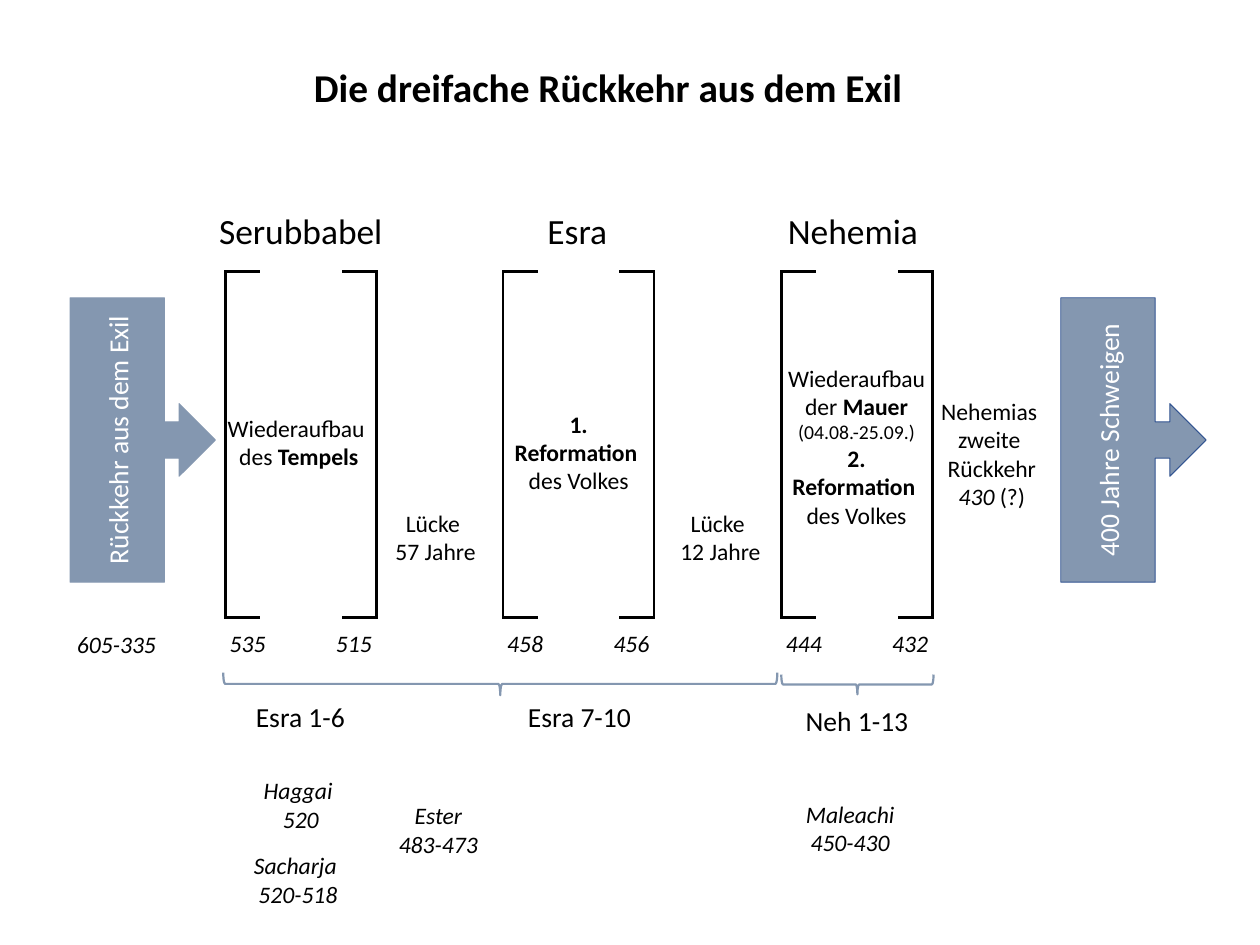
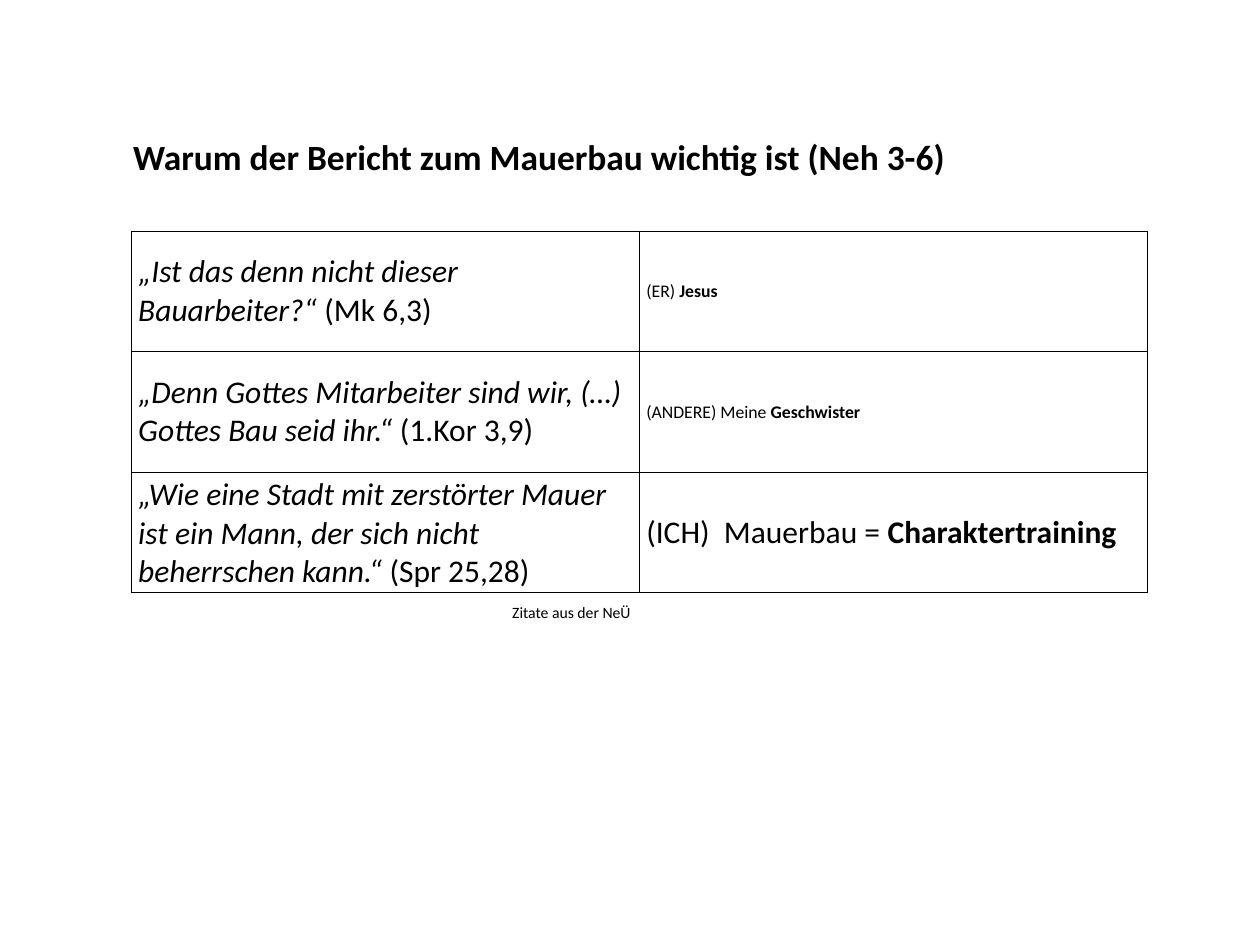
from dataclasses import dataclass
from typing import NamedTuple

from lxml import etree
from pptx import Presentation
from pptx.dml.color import RGBColor
from pptx.enum.shapes import MSO_CONNECTOR, MSO_SHAPE
from pptx.enum.text import MSO_ANCHOR, PP_ALIGN
from pptx.oxml.ns import qn
from pptx.util import Cm, Pt

STRAIGHT = MSO_CONNECTOR.STRAIGHT
CALLOUT = MSO_SHAPE.RIGHT_ARROW_CALLOUT
BRACE = MSO_SHAPE.RIGHT_BRACE
MIDDLE = MSO_ANCHOR.MIDDLE
CENTER = PP_ALIGN.CENTER
LEFT = PP_ALIGN.LEFT

COLORS = {"text": "000000", "slate": "8497B0", "edge": "325491", "light": "FFFFFF"}
FONT = "Calibri"

BRACKET_WIDTH = 5.41
BRACKET_TOP = 9.73
BRACKET_BOTTOM = 22.12
BRACKET_FOOT = 1.24
BRACKET_OVERLAP = 0.05
HEADING_WIDTH = 7.04
TAB_STOPS = (1.91, 3.81)


class Span(NamedTuple):
    text: str
    bold: bool = False
    italic: bool = False
    size: float | None = None


Line = tuple[Span, ...]


@dataclass(frozen=True)
class Note:
    left: float
    top: float
    lines: tuple[Line, ...]
    width: float = 7.04
    size: float = 24
    align: PP_ALIGN = CENTER
    wrap: bool = True


@dataclass(frozen=True)
class Period:
    name: str
    left: float
    heading_center: float
    years: str


@dataclass(frozen=True)
class Callout:
    left: float
    text: str
    edge: str


@dataclass(frozen=True)
class Brace:
    left: float
    top: float
    width: float
    height: float


def plain(*texts: str) -> tuple[Line, ...]:
    return tuple((Span(text),) for text in texts)


def italic(*texts: str) -> tuple[Line, ...]:
    return tuple((Span(text, italic=True),) for text in texts)


PERIODS = (
    Period("Serubbabel", 8.08, 10.78, "535\t\t515"),
    Period("Esra", 18.03, 20.69, "458\t\t456"),
    Period("Nehemia", 28.02, 30.57, "444\t\t432"),
)

CALLOUTS = (
    Callout(2.51, "Rückkehr aus dem Exil", "slate"),
    Callout(38.02, "400 Jahre Schweigen", "edge"),
)

BRACES = (Brace(8, 24.1, 19.86, 0.81), Brace(28, 24.17, 5.46, 0.71))

NOTES = (
    Note(7.19, 14.71, (
        (Span("Wiederaufbau "),),
        (Span("des "), Span("Tempels", bold=True)),
    )),
    Note(18.11, 14.55, (
        (Span("1. Reformation ", bold=True),),
        (Span("des Volkes"),),
    ), 5.26),
    Note(27.97, 12.9, (
        (Span("Wiederaufbau "),),
        (Span("der "), Span("Mauer", bold=True)),
        (Span("(04.08.-25.09.)", size=20),),
        (Span("2. Reformation ", bold=True),),
        (Span("des Volkes"),),
    ), 5.46),
    Note(32.03, 14.1, (
        *plain("Nehemias ", "zweite ", "Rückkehr"),
        (Span("430", italic=True), Span(" (?)")),
    )),
    Note(12.09, 18.11, plain("Lücke ", "57 Jahre")),
    Note(22.3, 18.11, plain("Lücke ", "12 Jahre")),
    Note(7.26, 27.69, italic("Haggai ", "520")),
    Note(7.16, 30.38, italic("Sacharja ", "520-518")),
    Note(12.19, 28.58, italic("Ester", "483-473")),
    Note(26.95, 28.52, italic("Maleachi", "450-430")),
    Note(2.51, 22.43, italic("605-335"), 3.35, align=LEFT),
    Note(8.92, 24.94, plain("Esra 1-6"), 3.73, 28, LEFT, False),
    Note(18.67, 24.94, plain("Esra 7-10"), 4.24, 28, LEFT, False),
    Note(28.63, 25.1, plain("Neh 1-13"), 4.24, 28, LEFT, False),
)

QUOTES: tuple[tuple[Line, Line], ...] = (
    (
        (Span("„Ist das denn nicht dieser Bauarbeiter?“ ", italic=True), Span("(Mk 6,3)")),
        (Span("(ER) ", size=18), Span("Jesus", bold=True, size=18)),
    ),
    (
        (Span("„Denn Gottes Mitarbeiter sind wir, (…) Gottes Bau seid ihr.“ ", italic=True),
         Span("(1.Kor 3,9)")),
        (Span("(ANDERE) Meine ", size=18), Span("Geschwister", bold=True, size=18)),
    ),
    (
        (Span("„Wie eine Stadt mit zerstörter Mauer ist ein Mann, "
              "der sich nicht beherrschen kann.“ ", italic=True), Span("(Spr 25,28)")),
        (Span("(ICH)  Mauerbau = "), Span("Charaktertraining", bold=True)),
    ),
)


def rgb(name: str) -> RGBColor:
    return RGBColor.from_string(COLORS[name])


def write_line(para, line: Line, size: float, color: str = "text", align=LEFT) -> None:
    para.alignment = align
    for span in line:
        run = para.add_run()
        run.text = span.text
        formats = {
            "name": FONT,
            "size": Pt(span.size or size),
            "bold": span.bold,
            "italic": span.italic,
        }
        for name, value in formats.items():
            setattr(run.font, name, value)
        run.font.color.rgb = rgb(color)


def add_note(page, note: Note):
    box = page.shapes.add_textbox(
        Cm(note.left), Cm(note.top), Cm(note.width),
        Pt(note.size * 1.2 * len(note.lines)) + Cm(0.25))
    frame = box.text_frame
    frame.word_wrap = note.wrap
    for index, line in enumerate(note.lines):
        para = frame.add_paragraph() if index else frame.paragraphs[0]
        write_line(para, line, note.size, align=note.align)
    return box


def add_title(page, text: str, left: float, top: float, width: float, size: float) -> None:
    add_note(page, Note(left, top, ((Span(text, bold=True),),), width, size, LEFT))


def add_line(page, x1: float, y1: float, x2: float, y2: float) -> None:
    line = page.shapes.add_connector(STRAIGHT, Cm(x1), Cm(y1), Cm(x2), Cm(y2))
    line.line.color.rgb = rgb("text")
    line.line.width = Pt(2.75)
    etree.SubElement(line.element.spPr, qn("a:effectLst"))


def add_bracket_side(page, x: float, inward: int) -> None:
    add_line(page, x, BRACKET_TOP - BRACKET_OVERLAP, x, BRACKET_BOTTOM + BRACKET_OVERLAP)
    for y in (BRACKET_TOP, BRACKET_BOTTOM):
        add_line(page, x, y, x + inward * BRACKET_FOOT, y)


def add_period(page, period: Period) -> None:
    add_bracket_side(page, period.left, 1)
    add_bracket_side(page, period.left + BRACKET_WIDTH, -1)
    add_note(page, Note(period.heading_center - HEADING_WIDTH / 2, 7.37,
                        plain(period.name), HEADING_WIDTH, 36))
    years = add_note(page, Note(period.left - 0.1, 22.4, italic(period.years),
                                5.61, align=LEFT))
    properties = years.text_frame.paragraphs[0]._p.get_or_add_pPr()
    stops = etree.SubElement(properties, qn("a:tabLst"))
    for stop in TAB_STOPS:
        etree.SubElement(stops, qn("a:tab"), pos=str(Cm(stop)), algn="l")


def add_callout(page, callout: Callout) -> None:
    arrow = page.shapes.add_shape(CALLOUT, Cm(callout.left), Cm(10.67), Cm(5.21), Cm(10.19))
    arrow.shadow.inherit = False
    arrow.fill.solid()
    arrow.fill.fore_color.rgb = rgb("slate")
    arrow.line.color.rgb = rgb(callout.edge)
    arrow.line.width = Pt(1)
    frame = arrow.text_frame
    frame.vertical_anchor = MIDDLE
    frame.word_wrap = True
    arrow.element.txBody.bodyPr.set("vert", "vert270")
    write_line(frame.paragraphs[0], (Span(callout.text),), 28, "light", CENTER)


def add_brace(page, brace: Brace) -> None:
    left = brace.left + (brace.width - brace.height) / 2
    top = brace.top - (brace.width - brace.height) / 2
    shape = page.shapes.add_shape(BRACE, Cm(left), Cm(top), Cm(brace.height), Cm(brace.width))
    shape.rotation = 90
    shape.shadow.inherit = False
    shape.fill.background()
    shape.line.color.rgb = rgb("slate")
    shape.line.width = Pt(2.25)


def add_borders(cell) -> None:
    properties = cell._tc.get_or_add_tcPr()
    for side in ("lnL", "lnR", "lnT", "lnB"):
        border = etree.SubElement(properties, qn(f"a:{side}"), w=str(Pt(1)))
        fill = etree.SubElement(border, qn("a:solidFill"))
        etree.SubElement(fill, qn("a:srgbClr"), val=COLORS["text"])


def add_quotes(page) -> None:
    table = page.shapes.add_table(
        len(QUOTES), 2, Cm(4.7), Cm(8.28), Cm(36.42), Cm(4.32 * len(QUOTES))).table
    table.first_row = False
    table.horz_banding = False
    for row, lines in enumerate(QUOTES):
        for column, line in enumerate(lines):
            cell = table.cell(row, column)
            add_borders(cell)
            cell.fill.background()
            cell.vertical_anchor = MIDDLE
            write_line(cell.text_frame.paragraphs[0], line, 32)


def build_timeline(page) -> None:
    add_title(page, "Die dreifache Rückkehr aus dem Exil", 11, 2.13, 22.25, 40)
    for period in PERIODS:
        add_period(page, period)
    for callout in CALLOUTS:
        add_callout(page, callout)
    for brace in BRACES:
        add_brace(page, brace)
    for note in NOTES:
        add_note(page, note)


def build_wall(page) -> None:
    add_title(page, "Warum der Bericht zum Mauerbau wichtig ist (Neh 3-6)",
              4.52, 4.72, 36.12, 36)
    add_quotes(page)
    add_note(page, Note(18.11, 21.46, plain("Zitate aus der NeÜ"), 4.83, 16, LEFT, False))


def main() -> None:
    deck = Presentation()
    deck.slide_width = Cm(45.16)
    deck.slide_height = Cm(33.86)
    for build in (build_timeline, build_wall):
        build(deck.slides.add_slide(deck.slide_layouts[6]))
    deck.save("out.pptx")


if __name__ == "__main__":
    main()
